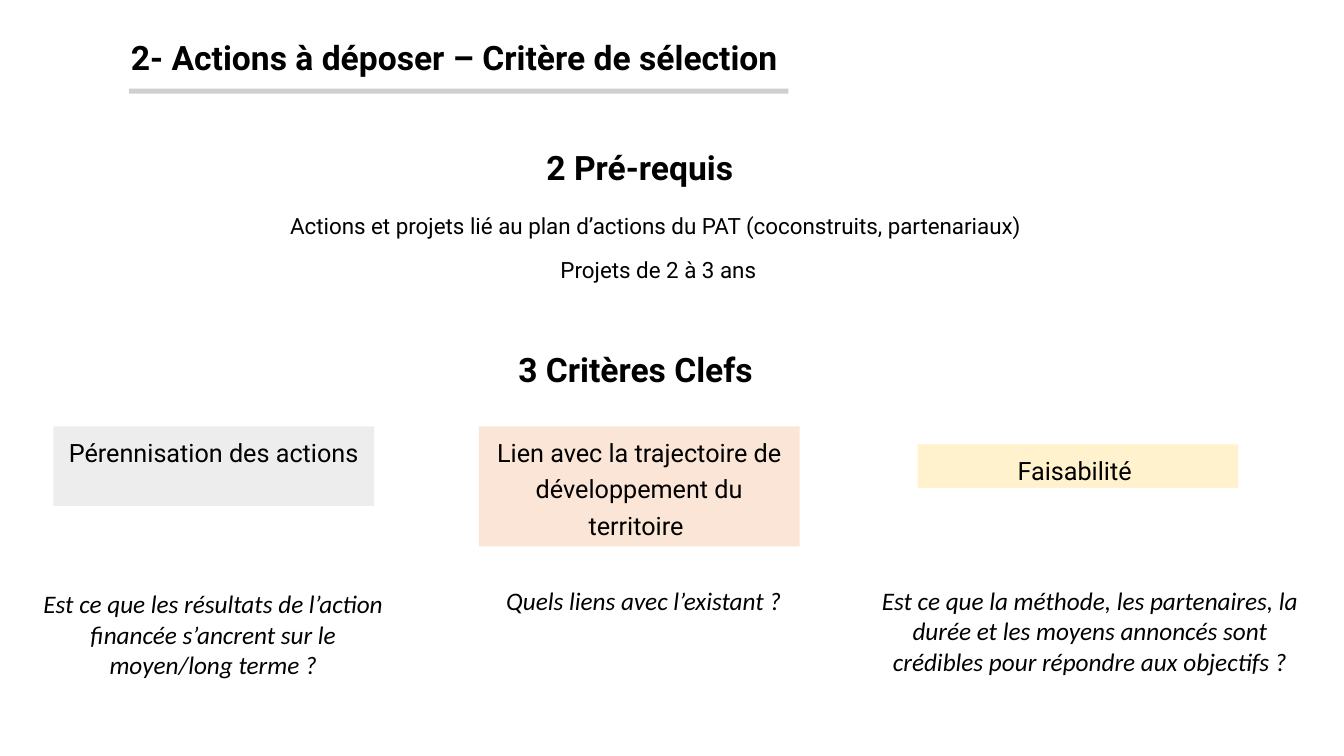
from dataclasses import dataclass

from pptx import Presentation
from pptx.dml.color import RGBColor
from pptx.enum.shapes import MSO_SHAPE
from pptx.enum.text import MSO_ANCHOR, PP_ALIGN
from pptx.util import Inches, Pt


@dataclass(frozen=True)
class Theme:
    heading_font: str = "Roboto"
    question_font: str = "Calibri"
    heading_size: int = 24
    criterion_size: int = 18
    body_size: int = 16
    text: str = "000000"
    rule: str = "D0CECE"
    grey: str = "EDEDED"
    orange: str = "FBE5D6"
    yellow: str = "FFF2CC"


theme = Theme()


def add_block(box, fill=None):
    """Add a filled rectangle, or a text box when no fill is given."""
    position = [Inches(value) for value in box]
    if fill is None:
        shape = slide.shapes.add_textbox(*position)
    else:
        shape = slide.shapes.add_shape(MSO_SHAPE.RECTANGLE, *position)
        shape.shadow.inherit = False
        shape.fill.solid()
        shape.fill.fore_color.rgb = RGBColor.from_string(fill)
        shape.line.fill.background()
    shape.text_frame.word_wrap = True
    return shape


def write(shape, lines, size, font=theme.heading_font, bold=False, italic=False,
          align=PP_ALIGN.CENTER, anchor=MSO_ANCHOR.TOP, line_spacing=1.0, gap=0):
    """Write one paragraph per line, all in the same style."""
    frame = shape.text_frame
    frame.text = "\n".join(lines)
    frame.vertical_anchor = anchor
    for paragraph in frame.paragraphs:
        paragraph.alignment = align
        paragraph.line_spacing = line_spacing
        paragraph.space_before = paragraph.space_after = Pt(gap)
        paragraph.font.name = font
        paragraph.font.size = Pt(size)
        paragraph.font.bold = bold
        paragraph.font.italic = italic
        paragraph.font.color.rgb = RGBColor.from_string(theme.text)


presentation = Presentation()
presentation.slide_width = Inches(13.33)
presentation.slide_height = Inches(7.5)
slide = presentation.slides.add_slide(presentation.slide_layouts[6])

# Title and section headings
headings = [
    ("2- Actions à déposer – Critère de sélection", (1.2, 0.05, 11.37, 1.08), PP_ALIGN.LEFT),
    ("2 Pré-requis", (0.4, 1.14, 11.89, 1.08), PP_ALIGN.CENTER),
    ("3 Critères Clefs ", (0.4, 3.15, 11.89, 1.08), PP_ALIGN.CENTER),
]
for heading, box, align in headings:
    write(add_block(box), [heading], theme.heading_size, bold=True, align=align,
          anchor=MSO_ANCHOR.MIDDLE, line_spacing=0.9)

# Rule under the title
add_block((1.28, 0.88, 6.54, 0.05), theme.rule)

# Prerequisites
prerequisites = [
    "Actions et projets lié au plan d’actions du PAT (coconstruits, partenariaux) ",
    "Projets de 2 à 3 ans",
]
write(add_block((0.4, 2.06, 12.26, 1.17)), prerequisites, theme.body_size, gap=6)

# Criteria, each with its question below
criteria = [
    ("Pérennisation des actions", (0.53, 4.23, 3.18, 0.79), theme.grey,
     "Est ce que les résultats de l’action financée s’ancrent sur le moyen/long terme ?",
     (0.23, 5.79, 3.77, 1.01)),
    ("Lien avec la trajectoire de développement du territoire ",
     (4.75, 4.23, 3.18, 1.19), theme.orange,
     "Quels liens avec l’existant ?", (4.85, 5.76, 3.07, 0.4)),
    ("Faisabilité ", (9.1, 4.41, 3.18, 0.43), theme.yellow,
     "Est ce que la méthode, les partenaires, la durée et les moyens annoncés "
     "sont crédibles pour répondre aux objectifs ?", (8.6, 5.76, 4.42, 1.01)),
]
for criterion, criterion_box, fill, question, question_box in criteria:
    write(add_block(criterion_box, fill), [criterion], theme.criterion_size,
          line_spacing=1.2, gap=6)
    write(add_block(question_box), [question], theme.criterion_size,
          font=theme.question_font, italic=True)

presentation.save("out.pptx")
